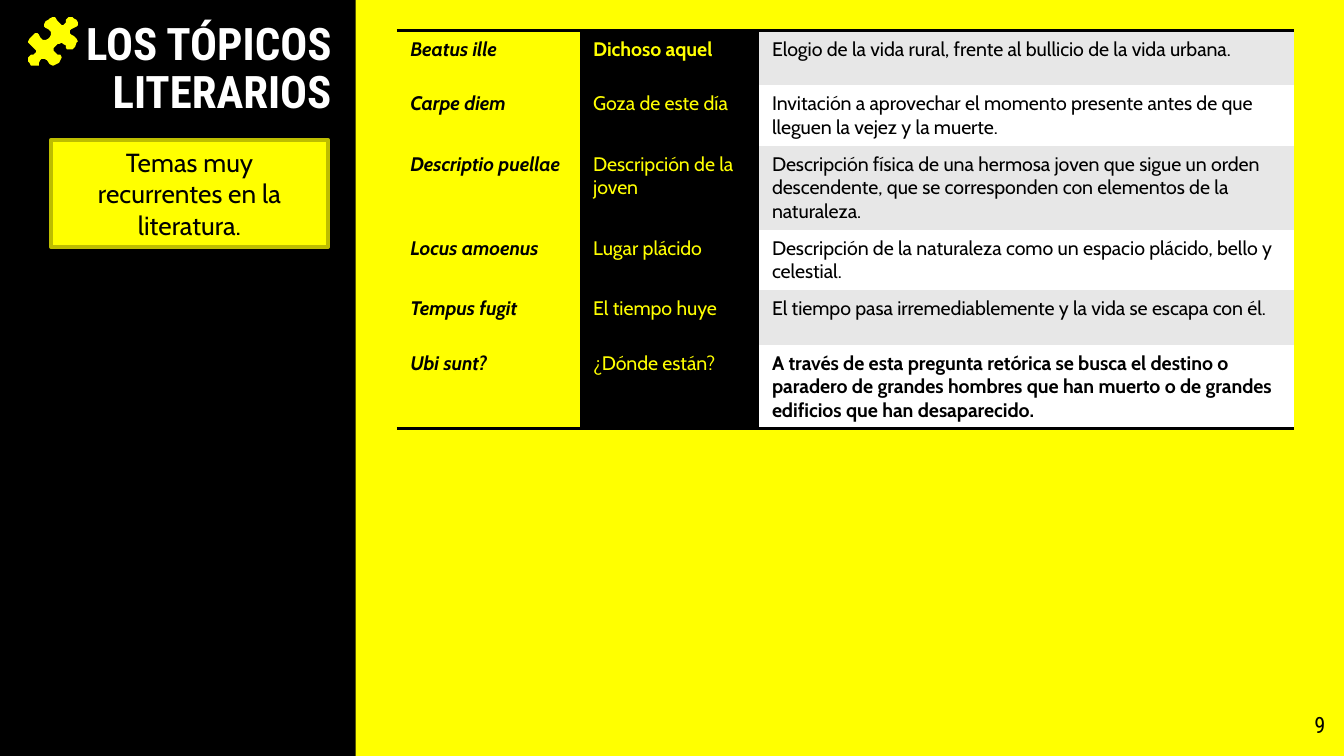
from lxml import etree
from pptx import Presentation
from pptx.dml.color import RGBColor
from pptx.enum.shapes import MSO_SHAPE
from pptx.enum.text import MSO_ANCHOR, PP_ALIGN
from pptx.oxml.ns import qn
from pptx.util import Pt

RECTANGLE = MSO_SHAPE.RECTANGLE
TOP, MIDDLE = MSO_ANCHOR.TOP, MSO_ANCHOR.MIDDLE
CENTER, LEFT, RIGHT = PP_ALIGN.CENTER, PP_ALIGN.LEFT, PP_ALIGN.RIGHT

YELLOW = RGBColor(0xFF, 0xFF, 0x00)
OLIVE = RGBColor(0xBD, 0xBD, 0x00)
BLACK = RGBColor(0x00, 0x00, 0x00)
WHITE = RGBColor(0xFF, 0xFF, 0xFF)
GRAY = RGBColor(0xE7, 0xE7, 0xE7)

HEADING_FONT = "Roboto Condensed"
BODY_FONT = "Cabin"
PLAIN_TABLE_STYLE = "{2D5ABB26-0587-4C30-8999-92F81FD0307C}"

PUZZLE_UNIT = 0.72
PUZZLE_OUTLINE = [
    (18, 0), (16, 1), (15, 2), (13, 3), (12, 5), (12, 7), (13, 8), (15, 9),
    (16, 9.5), (17, 11), (17, 13), (16, 15), (15, 16), (13, 17), (11, 17),
    (10, 16), (9, 15), (8.5, 13), (7, 12), (5, 12), (3, 13.5), (1, 16),
    (0, 18), (0, 19), (1, 20), (3, 22), (5, 23.5), (6, 25), (5.5, 26.5),
    (4, 28), (2, 28.5), (0.5, 29.5), (0, 31), (0, 33), (1, 34.5), (2, 35.5),
    (4, 36), (6, 36), (7.5, 35.5), (8.3, 34), (9, 32), (10.5, 31), (12, 31),
    (14, 32.5), (16, 35), (17.5, 36), (19, 36), (21, 35), (23, 33.5),
    (24.5, 31.5), (25, 30), (24, 28.5), (22, 27.5), (20, 26.5), (19, 25),
    (19, 23), (20, 21.5), (21.5, 20.3), (23, 19.5), (25, 19), (26.5, 20),
    (27.5, 21), (28, 23), (29, 24), (31, 24.3), (33, 23.5), (35, 21.5),
    (36.5, 19), (37, 18), (36, 16.5), (34, 14.5), (32, 13), (31, 12),
    (31, 10.5), (32, 9), (34, 8), (36, 7), (37, 5.5), (37, 4), (36, 2),
    (34.5, 0.7), (33, 0), (30.5, 0), (29, 1), (28, 2.5), (27.5, 4),
    (26.5, 5.5), (25, 6), (23.5, 5), (22, 3), (20, 0.5),
]

TOPICS = [
    ("Beatus ille", "Dichoso aquel",
     "Elogio de la vida rural, frente al bullicio de la vida urbana."),
    ("Carpe diem", "Goza de este día",
     "Invitación a aprovechar el momento presente antes de que lleguen la vejez y la muerte."),
    ("Descriptio puellae", "Descripción de la joven",
     "Descripción física de una hermosa joven que sigue un orden descendente, "
     "que se corresponden con elementos de la naturaleza."),
    ("Locus amoenus", "Lugar plácido",
     "Descripción de la naturaleza como un espacio plácido, bello y celestial."),
    ("Tempus fugit", "El tiempo huye",
     "El tiempo pasa irremediablemente y la vida se escapa con él."),
    ("Ubi sunt?", "¿Dónde están?",
     "A través de esta pregunta retórica se busca el destino o paradero de grandes "
     "hombres que han muerto o de grandes edificios que han desaparecido."),
]
COLUMN_WIDTHS = [98, 95.8, 286.6]
ROW_HEIGHT = 29.2


def write_text(frame, text, font, size, color, align=LEFT, bold=False, italic=False):
    frame.word_wrap = True
    paragraph = frame.paragraphs[0]
    paragraph.alignment = align
    run = paragraph.add_run()
    run.text = text
    run.font.name = font
    run.font.size = Pt(size)
    run.font.bold = bold
    run.font.italic = italic
    run.font.color.rgb = color
    return paragraph


def fill_shape(shape, color):
    shape.shadow.inherit = False
    shape.fill.solid()
    shape.fill.fore_color.rgb = color
    shape.line.fill.background()


def add_rectangle(slide, left, top, width, height, color):
    shape = slide.shapes.add_shape(RECTANGLE, Pt(left), Pt(top), Pt(width), Pt(height))
    fill_shape(shape, color)
    return shape


def add_heading_text(slide, left, top, width, height, text, size, color, bold=False):
    box = slide.shapes.add_textbox(Pt(left), Pt(top), Pt(width), Pt(height))
    frame = box.text_frame
    frame.vertical_anchor = TOP
    frame.margin_left = frame.margin_right = Pt(7.2)
    frame.margin_top = frame.margin_bottom = Pt(7.2)
    return write_text(frame, text, HEADING_FONT, size, color, RIGHT, bold)


def add_puzzle_piece(slide, left, top):
    builder = slide.shapes.build_freeform(*PUZZLE_OUTLINE[0], scale=Pt(PUZZLE_UNIT))
    builder.add_line_segments(PUZZLE_OUTLINE[1:], close=True)
    fill_shape(builder.convert_to_shape(Pt(left), Pt(top)), YELLOW)


def add_sidebar(slide, left, top, width, height):
    add_rectangle(slide, left, top, width, height, BLACK)
    title = add_heading_text(slide, left + 27, top + 4.3, 157.7, 40.3,
                             "LOS TÓPICOS LITERARIOS", 24, WHITE, True)
    title.line_spacing = 0.9
    summary = add_rectangle(slide, left + 27.4, top + 74.9, 148.3, 57.6, YELLOW)
    summary.line.color.rgb = OLIVE
    summary.line.width = Pt(2)
    summary.text_frame.vertical_anchor = MIDDLE
    write_text(summary.text_frame, "Temas muy recurrentes en la literatura.",
               BODY_FONT, 14, BLACK, CENTER)
    add_puzzle_piece(slide, left + 15.1, top + 9.2)


def add_border(cell, side):
    properties = cell._tc.get_or_add_tcPr()
    line = etree.Element(qn(f"a:{side}"), w=str(Pt(2)))
    fill = etree.SubElement(line, qn("a:solidFill"))
    etree.SubElement(fill, qn("a:srgbClr"), val=str(BLACK))
    properties.insert(0, line)


def add_topics_table(slide, left, top):
    last = len(TOPICS) - 1
    graphic = slide.shapes.add_table(len(TOPICS), len(COLUMN_WIDTHS), Pt(left), Pt(top),
                                     Pt(sum(COLUMN_WIDTHS)), Pt(ROW_HEIGHT * len(TOPICS)))
    table = graphic.table
    table.first_row = table.horz_banding = False
    table._tbl.tblPr.find(qn("a:tableStyleId")).text = PLAIN_TABLE_STYLE
    for column, width in zip(table.columns, COLUMN_WIDTHS):
        column.width = Pt(width)
    for row, topic in enumerate(TOPICS):
        table.rows[row].height = Pt(ROW_HEIGHT)
        fills = (YELLOW, BLACK, WHITE if row % 2 else GRAY)
        text_colors = (BLACK, YELLOW, BLACK)
        bolds = (True, row == 0, row == last)
        for column, text in enumerate(topic):
            cell = table.cell(row, column)
            cell.fill.solid()
            cell.fill.fore_color.rgb = fills[column]
            write_text(cell.text_frame, text, BODY_FONT, 10.5, text_colors[column],
                       bold=bolds[column], italic=column == 0)
            if row == 0:
                add_border(cell, "lnT")
            if row == last:
                add_border(cell, "lnB")


def main():
    presentation = Presentation()
    presentation.slide_width = Pt(720)
    presentation.slide_height = Pt(405)
    slide = presentation.slides.add_slide(presentation.slide_layouts[6])
    slide.background.fill.solid()
    slide.background.fill.fore_color.rgb = YELLOW
    add_sidebar(slide, 0, 0, 190.6, 405)
    add_heading_text(slide, 674, 373.7, 43.2, 31, "9", 12, BLACK)
    add_topics_table(slide, 212.6, 16.4)
    presentation.save("out.pptx")


if __name__ == "__main__":
    main()
